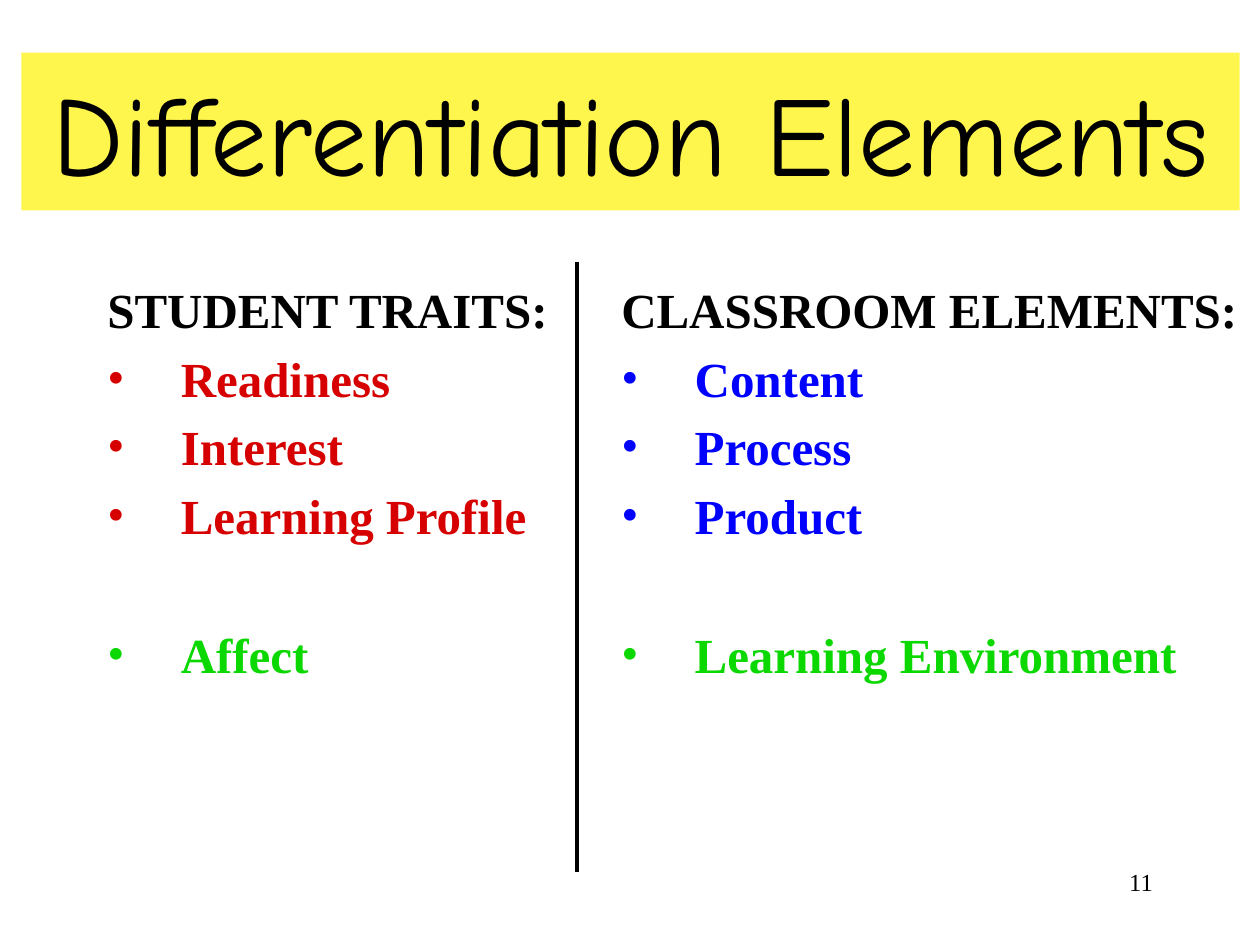
from dataclasses import dataclass

from lxml.etree import SubElement
from pptx import Presentation
from pptx.dml.color import RGBColor
from pptx.enum.shapes import MSO_CONNECTOR
from pptx.enum.text import MSO_ANCHOR, MSO_AUTO_SIZE, PP_ALIGN
from pptx.oxml.ns import qn
from pptx.util import Cm, Pt

COLORS = {
    "black": "000000",
    "banner": "FFF64D",
    "traits": "D70000",
    "elements": "0000FF",
    "setting": "0BD800",
}
TITLE_FONT = "Comic Neue"
TEXT_FONT = "Times New Roman"
HANGING = Cm(1.48)
GROUP_GAP = Pt(46)


@dataclass(frozen=True)
class Box:
    left: float
    top: float
    width: float
    height: float


@dataclass(frozen=True)
class Column:
    box: Box
    heading: str
    items: tuple[str, ...]
    item_color: str
    last_item: str


COLUMNS = (
    Column(Box(1.91, 5.51, 10.01, 10.39), "STUDENT TRAITS:",
           ("Readiness", "Interest", "Learning Profile"), "traits", "Affect"),
    Column(Box(12.27, 5.51, 13.13, 11.63), "CLASSROOM ELEMENTS:",
           ("Content", "Process", "Product"), "elements", "Learning Environment"),
)


def place(shape, box: Box) -> None:
    shape.left, shape.top = Cm(box.left), Cm(box.top)
    shape.width, shape.height = Cm(box.width), Cm(box.height)


def add_run(paragraph, text: str, font: str, size: float,
            color: str = "black", bold: bool = False) -> None:
    run = paragraph.add_run()
    run.text = text
    run.font.name = font
    run.font.size = Pt(size)
    run.font.bold = bold
    run.font.color.rgb = RGBColor.from_string(COLORS[color])


def add_line(paragraph, text: str, color: str, bullet: bool) -> None:
    """Write one hanging line of a column, with or without a bullet."""
    properties = paragraph._p.get_or_add_pPr()
    properties.set("marL", str(HANGING))
    properties.set("indent", str(-HANGING))
    if bullet:
        SubElement(properties, qn("a:buFont"), typeface=TEXT_FONT)
        SubElement(properties, qn("a:buChar"), char="•")
    else:
        SubElement(properties, qn("a:buNone"))
    add_run(paragraph, text, TEXT_FONT, 28, color, bold=True)


def fill_column(placeholder, column: Column) -> None:
    place(placeholder, column.box)
    frame = placeholder.text_frame
    frame.auto_size = MSO_AUTO_SIZE.NONE
    add_line(frame.paragraphs[0], column.heading, "black", bullet=False)
    for item in column.items:
        add_line(frame.add_paragraph(), item, column.item_color, bullet=True)
    last = frame.add_paragraph()
    last.space_before = GROUP_GAP
    add_line(last, column.last_item, "setting", bullet=True)


def fill_title(title) -> None:
    place(title, Box(0.43, 1.06, 24.56, 3.18))
    title.fill.solid()
    title.fill.fore_color.rgb = RGBColor.from_string(COLORS["banner"])
    frame = title.text_frame
    frame.auto_size = MSO_AUTO_SIZE.NONE
    frame.vertical_anchor = MSO_ANCHOR.MIDDLE
    frame.paragraphs[0].alignment = PP_ALIGN.CENTER
    add_run(frame.paragraphs[0], "Differentiation Elements", TITLE_FONT, 64.8)


def add_page_number(slide, number: str) -> None:
    page_number = slide.shapes.add_textbox(Cm(18.21), Cm(17.35), Cm(5.28), Cm(1.27))
    frame = page_number.text_frame
    frame.word_wrap = True
    frame.paragraphs[0].alignment = PP_ALIGN.RIGHT
    add_run(frame.paragraphs[0], number, TEXT_FONT, 14)


def add_divider(slide) -> None:
    divider = slide.shapes.add_connector(
        MSO_CONNECTOR.STRAIGHT, Cm(11.64), Cm(5.29), Cm(11.64), Cm(17.57))
    divider.line.color.rgb = RGBColor.from_string(COLORS["black"])
    divider.line.width = Pt(2.25)
    SubElement(divider._element.spPr, qn("a:effectLst"))


def main() -> None:
    presentation = Presentation()
    presentation.slide_width, presentation.slide_height = Cm(25.4), Cm(19.05)
    two_content = presentation.slide_layouts.get_by_name("Two Content")
    slide = presentation.slides.add_slide(two_content)
    title, *bodies = slide.placeholders

    fill_title(title)
    for body, column in zip(bodies, COLUMNS):
        fill_column(body, column)
    add_divider(slide)
    add_page_number(slide, "11")
    presentation.save("out.pptx")


if __name__ == "__main__":
    main()
